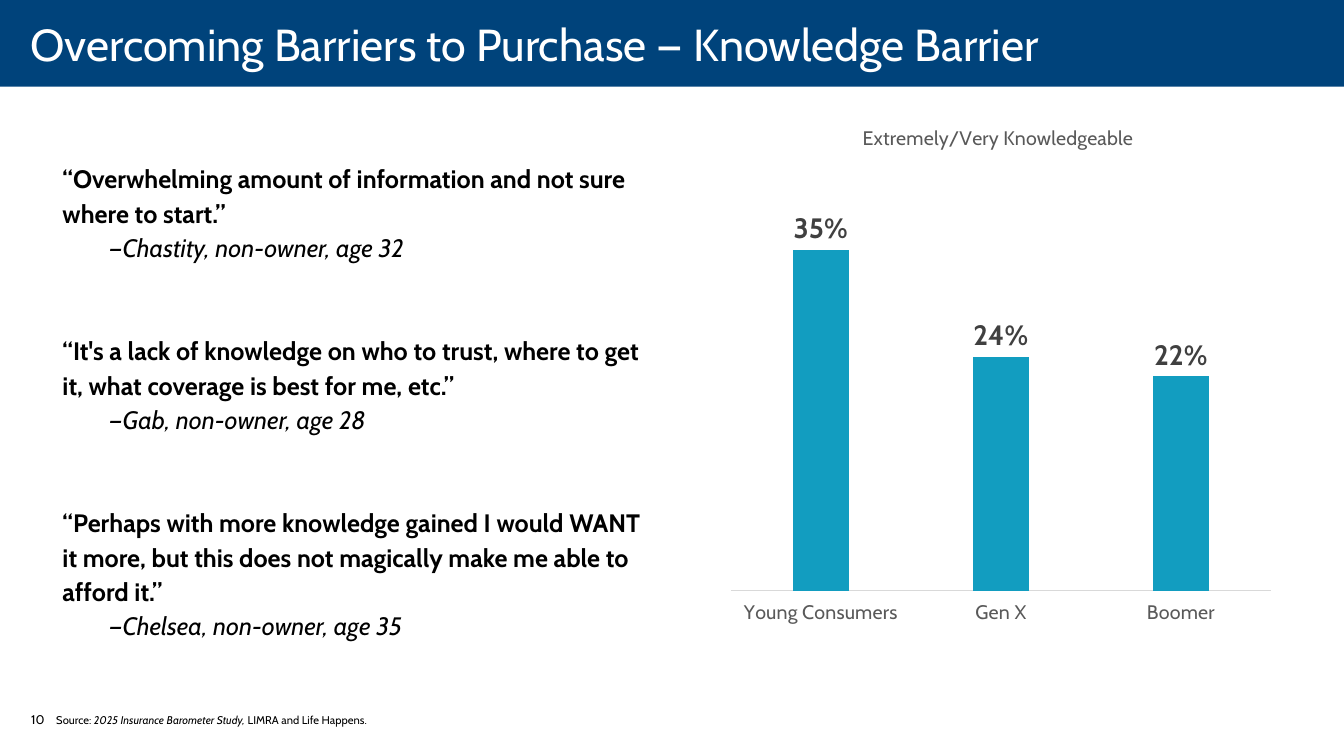
from dataclasses import dataclass

from lxml import etree
from pptx import Presentation
from pptx.chart.data import CategoryChartData
from pptx.dml.color import RGBColor
from pptx.enum.chart import XL_CHART_TYPE, XL_LABEL_POSITION, XL_TICK_LABEL_POSITION, XL_TICK_MARK
from pptx.enum.shapes import MSO_SHAPE
from pptx.enum.text import MSO_ANCHOR, MSO_AUTO_SIZE, PP_ALIGN
from pptx.oxml.ns import qn
from pptx.util import Inches, Pt

COLUMNS = XL_CHART_TYPE.COLUMN_CLUSTERED
OUTSIDE_END = XL_LABEL_POSITION.OUTSIDE_END
LABELS_LOW = XL_TICK_LABEL_POSITION.LOW
NO_TICKS = XL_TICK_MARK.NONE
RECTANGLE = MSO_SHAPE.RECTANGLE
TOP, MIDDLE, BOTTOM = MSO_ANCHOR.TOP, MSO_ANCHOR.MIDDLE, MSO_ANCHOR.BOTTOM
FIXED_SIZE = MSO_AUTO_SIZE.NONE
LEFT = PP_ALIGN.LEFT

NAVY = RGBColor(0x00, 0x43, 0x7B)
TEAL = RGBColor(0x12, 0x9D, 0xC0)
WHITE = RGBColor(0xFF, 0xFF, 0xFF)
BLACK = RGBColor(0x00, 0x00, 0x00)
CHARCOAL = RGBColor(0x40, 0x40, 0x40)
GRAY = RGBColor(0x59, 0x59, 0x59)
LIGHT_GRAY = RGBColor(0xD9, 0xD9, 0xD9)

FONT = "Cabin"
SLIDE_WIDTH, SLIDE_HEIGHT = Inches(13.33), Inches(7.5)
LINE_SPACING = 1.14
QUOTE_GAP = Pt(49)
SPEAKER_INDENT = Inches(0.46)


@dataclass(frozen=True)
class Area:
    """Percentages of the slide's width and height."""
    left: float
    top: float
    width: float
    height: float

    def lengths(self) -> tuple[int, int, int, int]:
        return (
            int(SLIDE_WIDTH * self.left / 100),
            int(SLIDE_HEIGHT * self.top / 100),
            int(SLIDE_WIDTH * self.width / 100),
            int(SLIDE_HEIGHT * self.height / 100),
        )


@dataclass(frozen=True)
class Quote:
    words: str
    speaker: str


@dataclass(frozen=True)
class Span:
    text: str
    italic: bool = False


@dataclass(frozen=True)
class Note:
    area: Area
    size: int
    anchor: MSO_ANCHOR
    spans: tuple[Span, ...]


BAND_AREA = Area(0, 0, 100, 11.47)
TITLE_AREA = Area(0, -0.67, 100, 12.93)
QUOTES_AREA = Area(4.65, 20.4, 43.36, 64.13)
CHART_AREA = Area(53.11, 13.87, 42.31, 70.67)
PLOT_SHARES = {"x": 0.03, "y": 0.18, "w": 0.95, "h": 0.73}

TITLE = "Overcoming Barriers to Purchase — Knowledge Barrier"
CHART_TITLE = "Extremely/Very Knowledgeable"
KNOWLEDGEABLE = {"Young Consumers": 0.35, "Gen X": 0.24, "Boomer": 0.22}
QUOTES = (
    Quote("“Overwhelming amount of information and not sure where to start.”",
          "—Chastity, non-owner, age 32"),
    Quote("“It's a lack of knowledge on who to trust, where to get it, "
          "what coverage is best for me, etc.”",
          "—Gab, non-owner, age 28"),
    Quote("“Perhaps with more knowledge gained I would WANT it more, "
          "but this does not magically make me able to afford it.”",
          "—Chelsea, non-owner, age 35"),
)
NOTES = (
    Note(Area(1.58, 93.47, 3.68, 5.33), 9, TOP, (Span("10"),)),
    Note(Area(3.45, 87.2, 43.89, 9.6), 8, BOTTOM, (
        Span("Source: "),
        Span("2025 Insurance Barometer Study, ", italic=True),
        Span("LIMRA and Life Happens."),
    )),
)


def style_font(font, size: int, color: RGBColor, bold: bool = False, italic: bool = False) -> None:
    font.name = FONT
    font.size = Pt(size)
    font.color.rgb = color
    font.bold = bold
    font.italic = italic


def place(box, area: Area) -> None:
    box.left, box.top, box.width, box.height = area.lengths()


def draw_band(page) -> None:
    band = page.shapes.add_shape(RECTANGLE, *BAND_AREA.lengths())
    band.shadow.inherit = False
    band.fill.solid()
    band.fill.fore_color.rgb = NAVY
    band.line.fill.background()
    band.element.getparent().insert(2, band.element)


def fill_title(box) -> None:
    place(box, TITLE_AREA)
    frame = box.text_frame
    frame.text = TITLE
    frame.auto_size = FIXED_SIZE
    frame.word_wrap = False
    frame.vertical_anchor = MIDDLE
    frame.margin_left, frame.margin_right = Inches(0.3), Inches(0.2)
    frame.margin_top = frame.margin_bottom = 0
    para = frame.paragraphs[0]
    para.alignment = LEFT
    style_font(para.runs[0].font, 32, WHITE)


def write_body_line(para, text: str, indent: int, gap: int, bold: bool, italic: bool) -> None:
    para.text = text
    para.level = 1
    properties = para._p.get_or_add_pPr()
    properties.set("marL", str(indent))
    properties.set("indent", "0")
    etree.SubElement(properties, qn("a:buNone"))
    para.alignment = LEFT
    para.line_spacing = LINE_SPACING
    para.space_before = gap
    para.space_after = Pt(0)
    style_font(para.runs[0].font, 18, BLACK, bold, italic)


def fill_quotes(box) -> None:
    place(box, QUOTES_AREA)
    frame = box.text_frame
    frame.auto_size = FIXED_SIZE
    frame.word_wrap = True
    frame.vertical_anchor = TOP
    frame.margin_left = frame.margin_right = 0
    frame.margin_top = frame.margin_bottom = Inches(0.05)
    for index, quote in enumerate(QUOTES):
        para = frame.add_paragraph() if index else frame.paragraphs[0]
        write_body_line(para, quote.words, 0, QUOTE_GAP if index else Pt(0), True, False)
        write_body_line(frame.add_paragraph(), quote.speaker, SPEAKER_INDENT, Pt(0), False, True)


def set_plot_layout(chart) -> None:
    plot_area = chart._chartSpace.find(".//" + qn("c:plotArea"))
    for former in plot_area.findall(qn("c:layout")):
        plot_area.remove(former)
    layout = etree.Element(qn("c:layout"))
    plot_area.insert(0, layout)
    manual = etree.SubElement(layout, qn("c:manualLayout"))
    settings = {"layoutTarget": "inner", "xMode": "edge", "yMode": "edge", **PLOT_SHARES}
    for name, value in settings.items():
        etree.SubElement(manual, qn("c:" + name)).set("val", str(value))


def draw_chart(page) -> None:
    data = CategoryChartData(number_format="0%")
    data.categories = list(KNOWLEDGEABLE)
    data.add_series(CHART_TITLE, list(KNOWLEDGEABLE.values()))
    chart = page.shapes.add_chart(COLUMNS, *CHART_AREA.lengths(), data).chart
    style_font(chart.font, 10, BLACK)
    chart.has_legend = False
    chart.has_title = True
    title_frame = chart.chart_title.text_frame
    title_frame.text = CHART_TITLE
    style_font(title_frame.paragraphs[0].runs[0].font, 14, GRAY)
    chart.chart_title.include_in_layout = False

    value_axis = chart.value_axis
    value_axis.visible = False
    value_axis.has_major_gridlines = False
    value_axis.minimum_scale, value_axis.maximum_scale = 0, 0.4
    category_axis = chart.category_axis
    category_axis.major_tick_mark = category_axis.minor_tick_mark = NO_TICKS
    category_axis.tick_label_position = LABELS_LOW
    style_font(category_axis.tick_labels.font, 14, GRAY)
    category_axis.format.line.color.rgb = LIGHT_GRAY
    category_axis.format.line.width = Pt(0.75)

    plot = chart.plots[0]
    plot.gap_width, plot.overlap = 219, -27
    plot.vary_by_categories = False
    series = plot.series[0]
    series.format.fill.solid()
    series.format.fill.fore_color.rgb = TEAL
    labels = series.data_labels
    labels.show_value = True
    labels.position = OUTSIDE_END
    labels.number_format, labels.number_format_is_linked = "0%", False
    style_font(labels.font, 20, CHARCOAL, bold=True)
    set_plot_layout(chart)


def draw_note(page, note: Note) -> None:
    frame = page.shapes.add_textbox(*note.area.lengths()).text_frame
    frame.word_wrap = True
    frame.vertical_anchor = note.anchor
    for span in note.spans:
        run = frame.paragraphs[0].add_run()
        run.text = span.text
        style_font(run.font, note.size, BLACK, italic=span.italic)


def main() -> None:
    deck = Presentation()
    deck.slide_width, deck.slide_height = SLIDE_WIDTH, SLIDE_HEIGHT
    page = deck.slides.add_slide(deck.slide_layouts[1])
    draw_band(page)
    fill_quotes(page.placeholders[1])
    fill_title(page.shapes.title)
    draw_chart(page)
    for note in NOTES:
        draw_note(page, note)
    deck.save("out.pptx")


if __name__ == "__main__":
    main()
